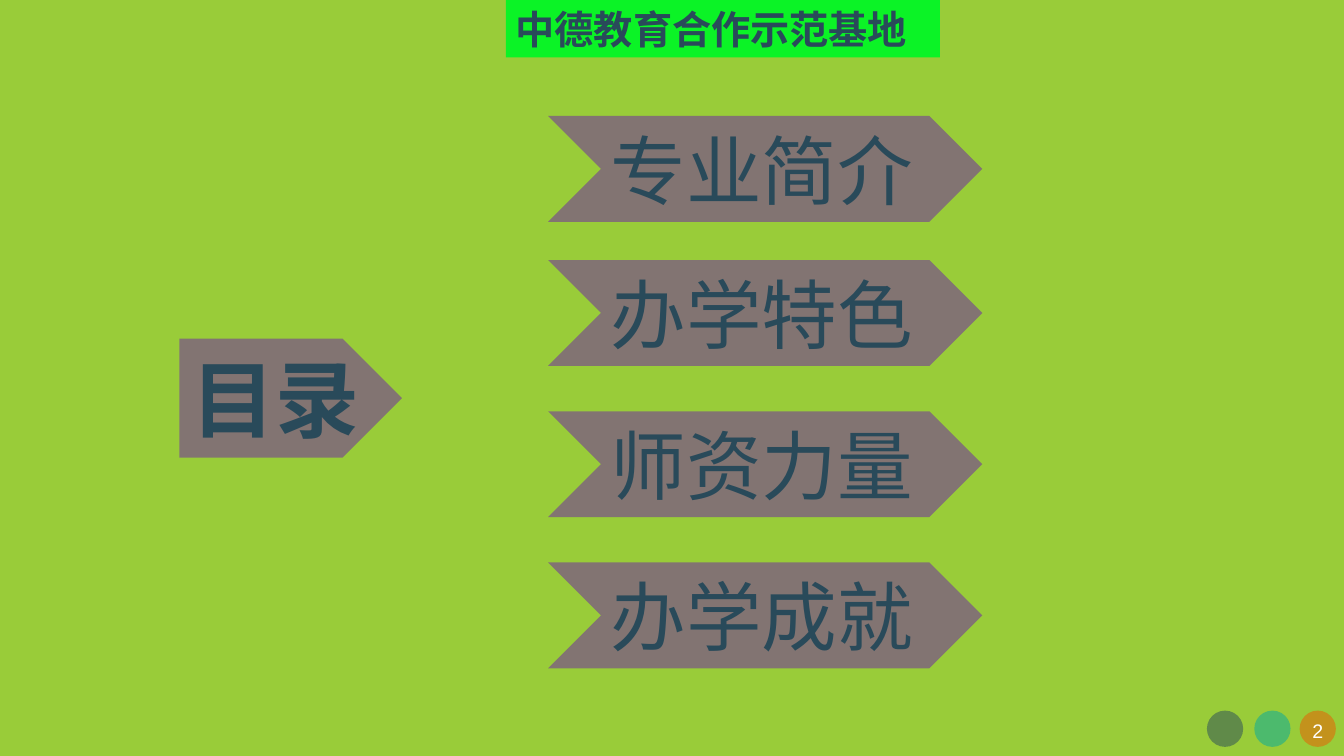
from dataclasses import dataclass

from lxml import etree
from pptx import Presentation
from pptx.dml.color import RGBColor
from pptx.enum.shapes import MSO_SHAPE
from pptx.enum.text import MSO_ANCHOR, PP_ALIGN
from pptx.oxml.ns import qn
from pptx.util import Inches, Pt

CHEVRON = MSO_SHAPE.CHEVRON
HOME_PLATE = MSO_SHAPE.PENTAGON
OVAL = MSO_SHAPE.OVAL
RECTANGLE = MSO_SHAPE.RECTANGLE
MIDDLE = MSO_ANCHOR.MIDDLE
LEFT, CENTER = PP_ALIGN.LEFT, PP_ALIGN.CENTER


@dataclass(frozen=True)
class Theme:
    font: str = "Arial"
    background: str = "99CC39"
    ink: str = "294A5A"
    purple: str = "7030A0"
    banner: str = "0BF326"
    teal: str = "00AAA2"
    orange: str = "ED5A00"
    white: str = "FFFFFF"
    contents_size: int = 60
    topic_size: int = 54
    banner_size: int = 28
    number_size: int = 14


@dataclass(frozen=True)
class Block:
    kind: MSO_SHAPE
    left: float
    top: float
    width: float
    height: float
    color: str
    opacity: int = 100


@dataclass(frozen=True)
class Topic:
    text: str
    top: float


THEME = Theme()
TOPICS = [
    Topic("专业简介", 1.15),
    Topic("办学特色", 2.58),
    Topic("师资力量", 4.08),
    Topic("办学成就", 5.58),
]
DOTS = [
    Block(OVAL, left, 7.05, 0.36, 0.36, color, 50)
    for left, color in [(11.98, THEME.ink), (12.45, THEME.teal), (12.9, THEME.orange)]
]


def draw_block(page, block: Block):
    shape = page.shapes.add_shape(
        block.kind, Inches(block.left), Inches(block.top),
        Inches(block.width), Inches(block.height),
    )
    shape.shadow.inherit = False
    shape.line.fill.background()
    shape.fill.solid()
    shape.fill.fore_color.rgb = RGBColor.from_string(block.color)
    if block.opacity < 100:
        color = shape.fill._xPr.find(qn("a:solidFill"))[0]
        etree.SubElement(color, qn("a:alpha"), val=str(block.opacity * 1000))
    return shape


def write_text(box, text: str, *, size: int, color: str = THEME.ink,
               bold: bool = False, align: PP_ALIGN = LEFT, wrap: bool = True) -> None:
    frame = box.text_frame
    frame.word_wrap = wrap
    frame.vertical_anchor = MIDDLE
    para = frame.paragraphs[0]
    para.alignment = align
    span = para.add_run()
    span.text = text
    span.font.name = THEME.font
    span.font.size = Pt(size)
    span.font.bold = bold
    span.font.color.rgb = RGBColor.from_string(color)


def main() -> None:
    deck = Presentation()
    deck.slide_width, deck.slide_height = Inches(13.34), Inches(7.5)
    page = deck.slides.add_slide(deck.slide_layouts[6])
    page.background.fill.solid()
    page.background.fill.fore_color.rgb = RGBColor.from_string(THEME.background)

    for dot in DOTS:
        draw_block(page, dot)
    number = page.shapes.add_textbox(Inches(12.86), Inches(7.08), Inches(0.44), Inches(0.34))
    write_text(number, "2", size=THEME.number_size, color=THEME.white,
               align=CENTER, wrap=False)

    contents = draw_block(page, Block(HOME_PLATE, 1.78, 3.36, 2.21, 1.18, THEME.purple, 56))
    write_text(contents, "目录", size=THEME.contents_size, bold=True, align=CENTER)

    for topic in TOPICS:
        arrow = draw_block(page, Block(CHEVRON, 5.44, topic.top, 4.31, 1.05, THEME.purple, 56))
        write_text(arrow, topic.text, size=THEME.topic_size)

    banner = draw_block(page, Block(RECTANGLE, 5.02, 0, 4.31, 0.57, THEME.banner))
    write_text(banner, "中德教育合作示范基地", size=THEME.banner_size, bold=True)

    deck.save("out.pptx")


if __name__ == "__main__":
    main()
